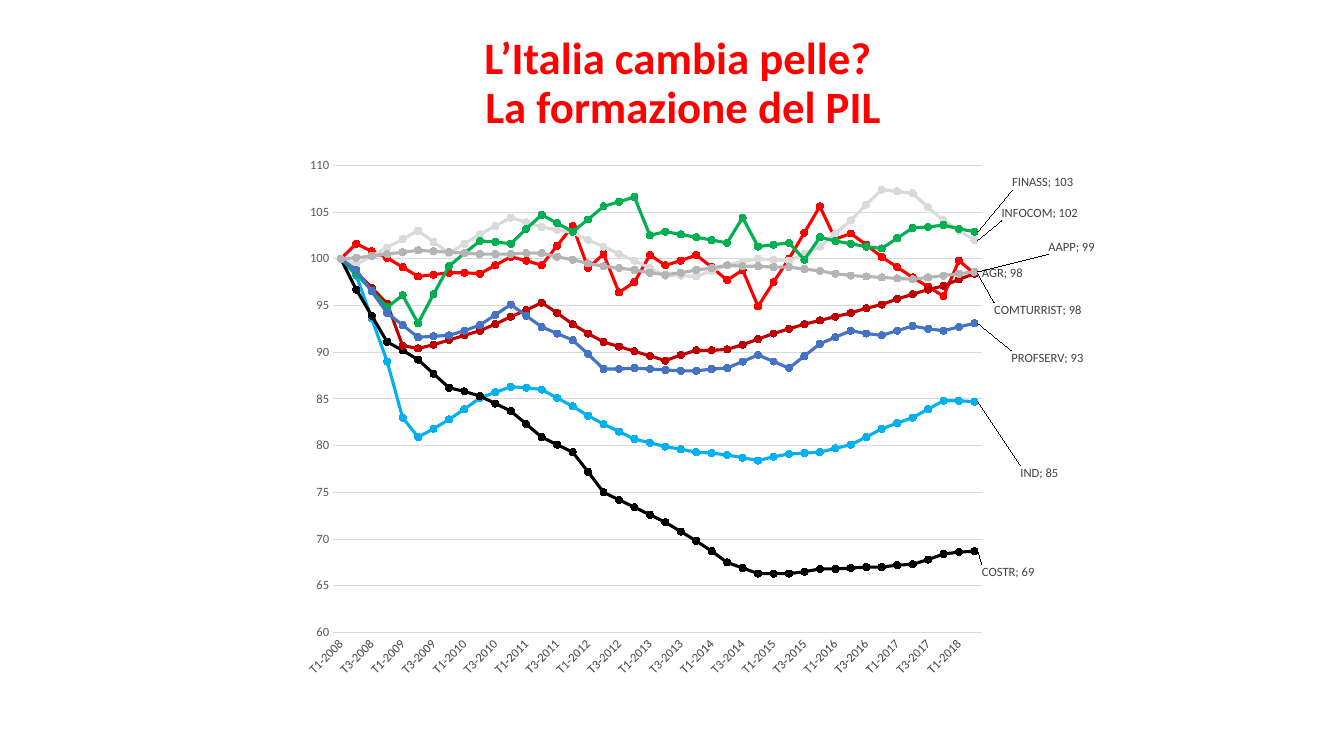
from itertools import pairwise
from lxml import etree
from pptx import Presentation
from pptx.chart.data import CategoryChartData
from pptx.dml.color import RGBColor
from pptx.enum.chart import XL_CHART_TYPE as ChartType, XL_MARKER_STYLE as Marker, XL_TICK_MARK as Tick
from pptx.enum.text import MSO_ANCHOR as Anchor, PP_ALIGN as Align
from pptx.util import Pt

FONT = "Calibri"
TITLE = ["L’Italia cambia pelle? ", "La formazione del PIL"]
QUARTERS = [f"T{q}-{year}" for year in range(2008, 2019) for q in range(1, 5)][:42]
COLORS = {
    "title": "FF0000", "axis text": "595959", "label": "404040", "grid": "D9D9D9", "chart text": "000000",
    "AGR": "FF0000", "IND": "00B0F0", "COSTR": "000000", "COMTURRIST": "C00000",
    "INFOCOM": "DADADA", "FINASS": "00B050", "PROFSERV": "4472C4", "AAPP": "B4B4B4",
}
# Index from T2-2008 to T2-2018 at even steps; every sector starts at BASE in T1-2008
BASE = 100
SECTORS = {
    "AGR": [101.6, 100.1, 98.1, 98.5, 98.4, 100.2, 99.3, 103.5, 100.5, 97.5, 99.3,
            100.4, 97.7, 94.9, 100, 105.6, 102.7, 100.2, 98, 96, 98.4],
    "IND": [98.2, 89, 80.9, 82.8, 85.1, 86.3, 86, 84.2, 82.3, 80.7, 79.9,
            79.3, 79, 78.4, 79.1, 79.3, 80.1, 81.8, 83, 84.8, 84.7],
    "COSTR": [96.7, 91.1, 89.2, 86.2, 85.3, 83.7, 80.9, 79.3, 75, 73.4, 71.8,
              69.8, 67.5, 66.3, 66.3, 66.8, 66.9, 67, 67.3, 68.4, 68.7],
    "COMTURRIST": [98.6, 95.2, 90.4, 91.3, 92.3, 93.8, 95.3, 93, 91.1, 90.1, 89.1,
                   90.2, 90.3, 91.4, 92.5, 93.4, 94.2, 95.1, 96.2, 97.1, 98.4],
    "INFOCOM": [99.4, 101.2, 103, 100.6, 102.6, 104.4, 103.4, 102.8, 101.3, 99.8, 98.2,
                98.1, 99.3, 100, 99.8, 101.3, 104.1, 107.4, 107, 104.1, 102],
    "FINASS": [98.4, 94.8, 93.1, 99.2, 101.9, 101.6, 104.7, 102.9, 105.6, 106.6, 102.9,
               102.3, 101.7, 101.3, 101.7, 102.3, 101.6, 101.1, 103.3, 103.6, 102.9],
    "PROFSERV": [98.8, 94.2, 91.6, 91.8, 92.9, 95.1, 92.7, 91.3, 88.2, 88.3, 88.1,
                 88, 88.3, 89.7, 88.3, 90.9, 92.3, 91.8, 92.8, 92.3, 93.1],
    "AAPP": [100.1, 100.9, 100.5, 100.6, 99.2, 98.3, 99.3, 99.1, 98.2, 97.8, 98.6],
}
# Quarters between two steps that stand clear of the straight line
SPIKES = {
    "AGR": {"T1-2012": 99, "T3-2012": 96.4, "T1-2013": 100.4, "T3-2014": 98.8,
            "T1-2016": 102.1, "T1-2018": 99.8},
    "IND": {"T1-2009": 83},
    "COMTURRIST": {"T1-2009": 90.7},
    "FINASS": {"T1-2009": 96.1, "T1-2013": 102.5, "T3-2014": 104.4, "T3-2015": 99.9},
}
# Shift of each end label from its point, in points
LABEL_SHIFT = {
    "IND": (28, 51), "COSTR": (0, 15), "COMTURRIST": (9, 26), "INFOCOM": (14, -19),
    "FINASS": (22, -35), "PROFSERV": (21, 25), "AAPP": (48, -18),
}
CHART_W, CHART_H = 591, 407
PLOT = {"x": 0.08, "y": 0.09, "w": 0.79, "h": 0.82}
C_NS = "http://schemas.openxmlformats.org/drawingml/2006/chart"
A_NS = "http://schemas.openxmlformats.org/drawingml/2006/main"
C15_NS = "http://schemas.microsoft.com/office/drawing/2012/chart"
C = f"{{{C_NS}}}"


def quarterly_index(sector):
    """Fill the quarters between the steps along straight lines, then set the spikes."""
    steps = SECTORS[sector]
    span = (len(QUARTERS) - 2) // (len(steps) - 1)
    values = [BASE] + [round(start + (end - start) * k / span, 1)
                       for start, end in pairwise(steps) for k in range(span)] + steps[-1:]
    spikes = SPIKES.get(sector, {})
    return [spikes.get(quarter, value) for quarter, value in zip(QUARTERS, values)]


def rgb(name):
    return RGBColor.from_string(COLORS[name])


def set_font(font, size, color):
    font.name, font.size = FONT, Pt(size)
    font.color.rgb = rgb(color)


def style_line(line, color, width):
    line.color.rgb = rgb(color)
    line.width = Pt(width)


def show_flags(*shown):
    flags = ("LegendKey", "Val", "CatName", "SerName", "Percent", "BubbleSize")
    return "".join(f'<c:show{flag} val="{int(flag in shown)}"/>' for flag in flags)


def manual_layout(parts):
    return "<c:layout><c:manualLayout>" + "".join(
        f'<c:{tag} val="{value}"/>' for tag, value in parts.items()) + "</c:manualLayout></c:layout>"


def chart_xml(body):
    """Parse one chart element written with the c: and a: prefixes."""
    cut = body.index(">")
    return etree.fromstring(f'{body[:cut]} xmlns:c="{C_NS}" xmlns:a="{A_NS}"{body[cut:]}')


def add_end_label(series):
    """Label the last point with name and value, joined to it by a leader line."""
    layout = ""
    if series.name in LABEL_SHIFT:
        dx, dy = LABEL_SHIFT[series.name]
        layout = manual_layout({"x": round(dx / CHART_W, 3), "y": round(dy / CHART_H, 3)})
    labels = chart_xml(
        f'<c:dLbls><c:dLbl><c:idx val="{len(QUARTERS) - 1}"/>{layout}'
        '<c:numFmt formatCode="0" sourceLinked="0"/><c:spPr><a:noFill/><a:ln><a:noFill/></a:ln></c:spPr>'
        '<c:txPr><a:bodyPr wrap="none"/><a:p><a:pPr><a:defRPr sz="900"><a:solidFill>'
        f'<a:srgbClr val="{COLORS["label"]}"/></a:solidFill><a:latin typeface="{FONT}"/></a:defRPr></a:pPr></a:p>'
        f'</c:txPr><c:dLblPos val="r"/>{show_flags("Val", "SerName")}<c:separator>; </c:separator></c:dLbl>'
        f'{show_flags()}<c:extLst><c:ext uri="{{CE6537A1-D6FC-4f65-9D91-7224C49458BB}}" xmlns:c15="{C15_NS}">'
        '<c15:showLeaderLines val="1"/></c:ext></c:extLst></c:dLbls>')
    series._element.find(C + "cat").addprevious(labels)


def add_sector_chart(slide):
    data = CategoryChartData(number_format="General")
    data.categories = QUARTERS
    for sector in SECTORS:
        data.add_series(sector, quarterly_index(sector))
    chart = slide.shapes.add_chart(
        ChartType.LINE_MARKERS, Pt(191), Pt(81.5), Pt(CHART_W), Pt(CHART_H), data).chart
    chart.has_legend = chart.has_title = False
    set_font(chart.font, 10, "chart text")
    chart.plots[0].vary_by_categories = False

    quarters, index = chart.category_axis, chart.value_axis
    for axis in (quarters, index):
        axis.major_tick_mark = axis.minor_tick_mark = Tick.NONE
        set_font(axis.tick_labels.font, 9, "axis text")
    style_line(quarters.format.line, "grid", 0.75)
    quarters._element.find(f"{C}txPr/{{{A_NS}}}bodyPr").set("rot", "-2700000")
    quarters._element.find(C + "noMultiLvlLbl").addprevious(chart_xml('<c:tickLblSkip val="2"></c:tickLblSkip>'))
    index.minimum_scale, index.maximum_scale, index.major_unit = 60, 110, 5
    index.format.line.fill.background()
    style_line(index.major_gridlines.format.line, "grid", 0.75)

    for series in chart.plots[0].series:
        series.smooth = False
        style_line(series.format.line, series.name, 2.25)
        marker = series.marker
        marker.style, marker.size = Marker.CIRCLE, 5
        marker.format.fill.solid()
        marker.format.fill.fore_color.rgb = rgb(series.name)
        style_line(marker.format.line, series.name, 0.75)
        add_end_label(series)

    plot_area = chart._chartSpace.find(f"{C}chart/{C}plotArea")
    for layout in plot_area.findall(C + "layout"):
        plot_area.remove(layout)
    plot_area.insert(0, chart_xml(manual_layout(
        {"layoutTarget": "inner", "xMode": "edge", "yMode": "edge", **PLOT})))


def add_title(slide):
    frame = slide.shapes.add_textbox(Pt(51), Pt(22.3), Pt(874), Pt(76.3)).text_frame
    frame.word_wrap = True
    frame.vertical_anchor = Anchor.MIDDLE
    frame.text = "\n".join(TITLE)
    for paragraph in frame.paragraphs:
        paragraph.alignment, paragraph.line_spacing = Align.CENTER, 0.9
        set_font(paragraph.font, 32, "title")
        paragraph.font.bold = True


def main():
    deck = Presentation()
    deck.slide_width, deck.slide_height = Pt(960), Pt(540)
    slide = deck.slides.add_slide(deck.slide_layouts[6])
    add_sector_chart(slide)
    add_title(slide)
    deck.save("out.pptx")


if __name__ == "__main__":
    main()
